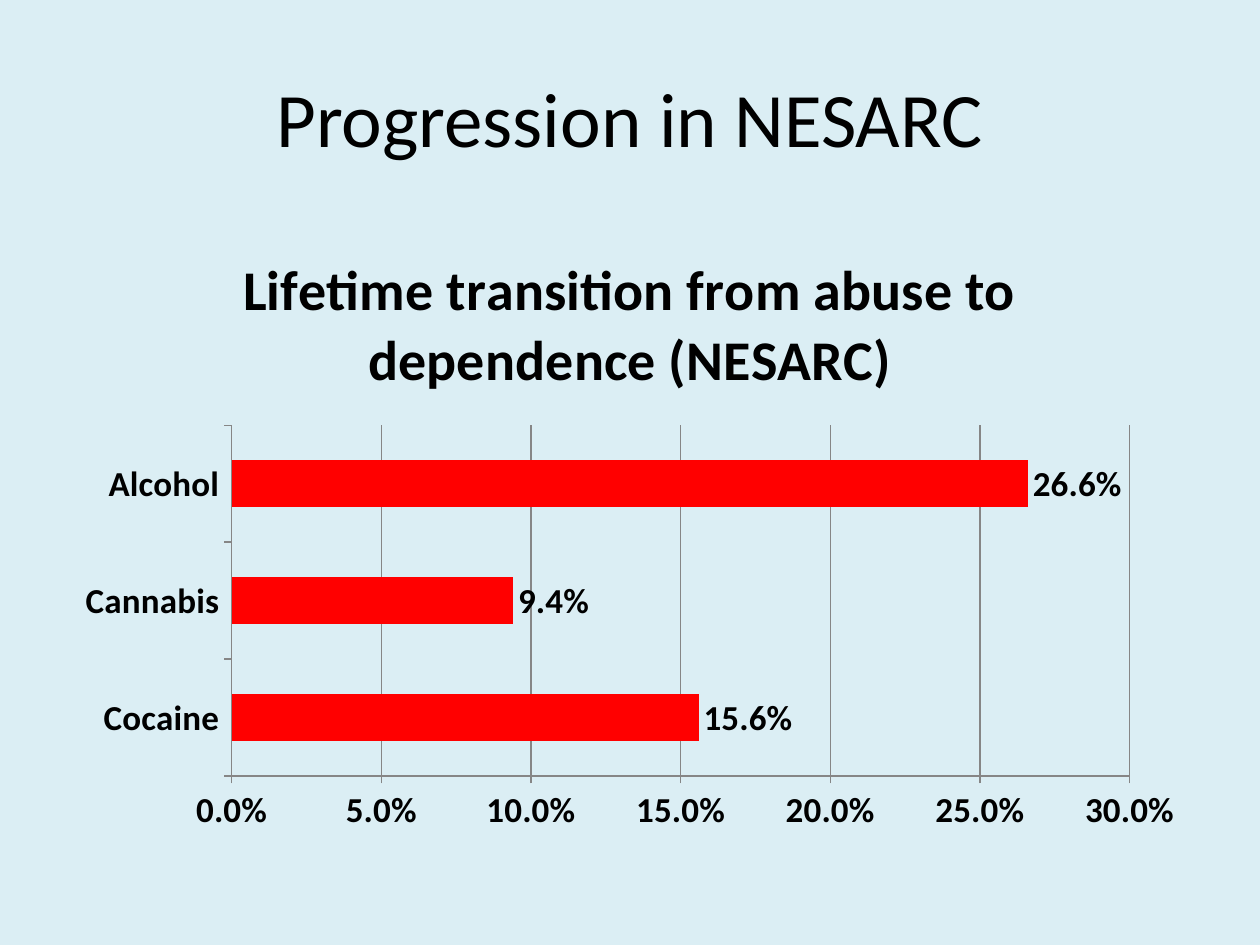
from dataclasses import dataclass

from pptx import Presentation
from pptx.chart.data import CategoryChartData
from pptx.dml.color import RGBColor
from pptx.enum.chart import XL_CHART_TYPE, XL_LABEL_POSITION, XL_TICK_MARK
from pptx.enum.text import MSO_ANCHOR, PP_ALIGN
from pptx.util import Cm, Pt

BAR = XL_CHART_TYPE.BAR_CLUSTERED
END = XL_LABEL_POSITION.OUTSIDE_END
OUT = XL_TICK_MARK.OUTSIDE
MID = MSO_ANCHOR.MIDDLE
CENTER = PP_ALIGN.CENTER
PERCENT = "0.0%"


@dataclass(frozen=True)
class Theme:
    back: RGBColor = RGBColor(0xDB, 0xEE, 0xF4)
    ink: RGBColor = RGBColor(0, 0, 0)
    bar: RGBColor = RGBColor(0xFF, 0, 0)
    rule: RGBColor = RGBColor(0x86, 0x86, 0x86)
    face: str = "Calibri"
    head: Pt = Pt(44)
    sub: Pt = Pt(32)
    label: Pt = Pt(20)


def assign(item, values):
    for name, value in values.items():
        setattr(item, name, value)


class Deck:
    def __init__(self, theme):
        self.theme = theme
        self.file = Presentation()
        assign(self.file, {"slide_width": Cm(25.4), "slide_height": Cm(19.05)})
        self.slide = self.file.slides.add_slide(self.file.slide_layouts[5])
        fill = self.slide.background.fill
        fill.solid()
        fill.fore_color.rgb = theme.back

    def style(self, font, size, bold):
        assign(font, {"name": self.theme.face, "size": size, "bold": bold})
        font.color.rgb = self.theme.ink

    def line(self, form):
        form.line.width = Pt(0.75)
        form.line.color.rgb = self.theme.rule

    def title(self, text, left, top, width, height):
        box = self.slide.shapes.title
        assign(box, {"left": left, "top": top, "width": width, "height": height})
        frame = box.text_frame
        assign(frame, {"text": text, "vertical_anchor": MID, "word_wrap": True})
        para = frame.paragraphs[0]
        para.alignment = CENTER
        self.style(para.runs[0].font, self.theme.head, False)

    def bars(self, text, rows, left, top, width, height):
        data = CategoryChartData(number_format=PERCENT)
        data.categories = list(rows)
        data.add_series("Series 1", list(rows.values()))
        frame = self.slide.shapes.add_chart(BAR, left, top, width, height, data)
        chart = frame.chart
        assign(chart, {"has_legend": False, "has_title": True})
        self.style(chart.font, self.theme.label, True)
        head = chart.chart_title
        head.include_in_layout = False
        head.text_frame.text = text
        run = head.text_frame.paragraphs[0].runs[0]
        self.style(run.font, self.theme.sub, True)

        plot = chart.plots[0]
        assign(plot, {"gap_width": 150, "vary_by_categories": False,
                      "has_data_labels": True})
        assign(plot.data_labels, {"show_value": True, "position": END,
                                  "number_format": PERCENT,
                                  "number_format_is_linked": False})
        self.style(plot.data_labels.font, self.theme.label, True)
        fill = plot.series[0].format.fill
        fill.solid()
        fill.fore_color.rgb = self.theme.bar

        scale = chart.value_axis
        assign(scale, {"minimum_scale": 0, "maximum_scale": 0.3,
                       "major_unit": 0.05, "has_major_gridlines": True})
        assign(scale.tick_labels, {"number_format": PERCENT,
                                   "number_format_is_linked": False})
        self.line(scale.major_gridlines.format)
        for axis in (chart.category_axis, scale):
            axis.major_tick_mark = OUT
            self.style(axis.tick_labels.font, self.theme.label, True)
            self.line(axis.format)

    def save(self):
        self.file.save("out.pptx")


def main():
    deck = Deck(Theme())
    left, width = Cm(1.27), Cm(22.86)
    deck.title("Progression in NESARC", left, Cm(0.76), width, Cm(3.18))
    rates = {"Cocaine": 0.156, "Cannabis": 0.094, "Alcohol": 0.266}
    deck.bars("Lifetime transition from abuse to dependence (NESARC)", rates,
              left, Cm(4.45), width, Cm(12.57))
    deck.save()


if __name__ == "__main__":
    main()
